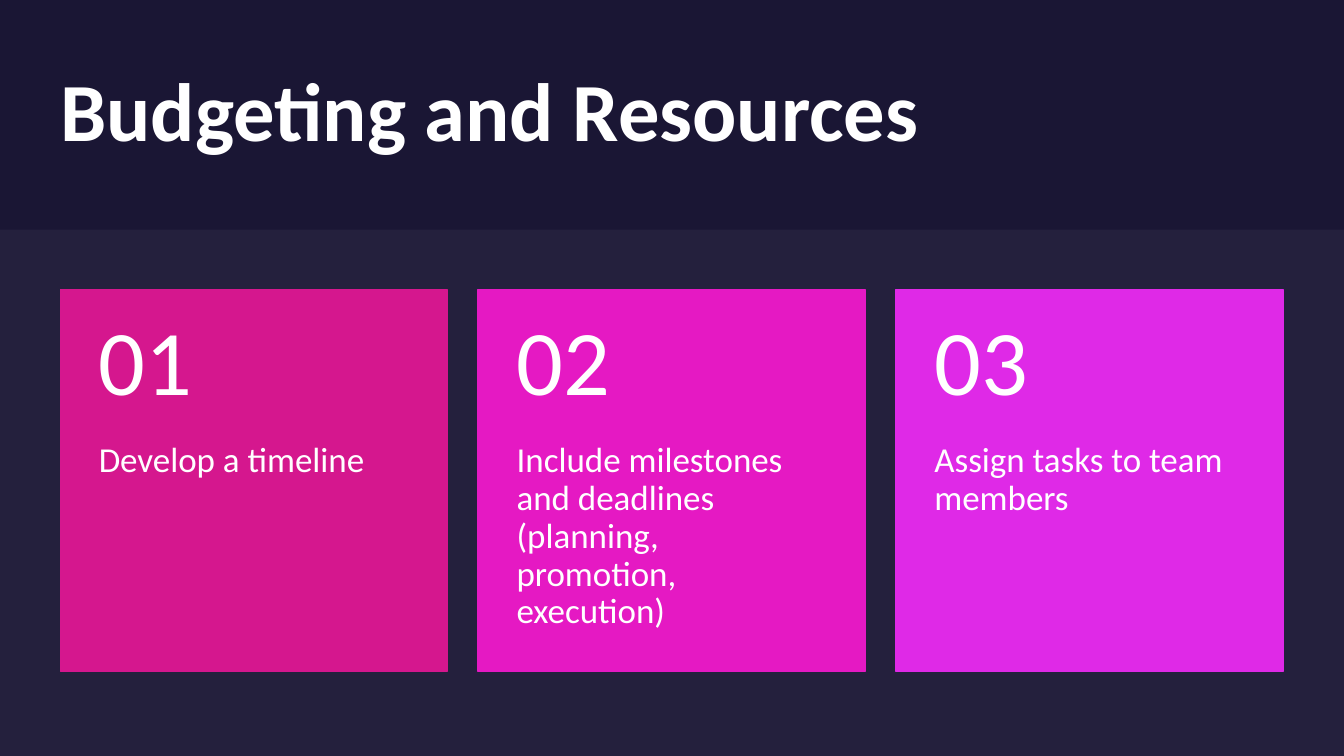
from lxml.etree import SubElement
from pptx import Presentation
from pptx.dml.color import RGBColor
from pptx.enum.shapes import MSO_SHAPE
from pptx.enum.text import MSO_ANCHOR, PP_ALIGN
from pptx.oxml.ns import qn
from pptx.util import Cm, Pt

COLORS = {"bg": "1A1634", "panel": "E3E0F2", "text": "FFFFFF",
          "01": "D5178E", "02": "E519C3", "03": "DF29E7"}
FONT = "Calibri"
WIDTH, HEIGHT = 33.87, 19.05
MARGIN = 1.52
PANEL_TOP = 5.79
CARD_TOP, CARD_W, CARD_H, CARD_STEP = 7.29, 9.75, 9.63, 10.53
HEAD_H = 3.86
CARDS = [
    ("01", "Develop a timeline"),
    ("02", "Include milestones and deadlines (planning, promotion, execution)"),
    ("03", "Assign tasks to team members"),
]


def rgb(name):
    return RGBColor.from_string(COLORS[name])


def set_text(sp, text, size, insets=(0, 0, 0, 0), anchor=MSO_ANCHOR.TOP, bold=False):
    """Write one left-aligned paragraph; insets are left, top, right, bottom in cm."""
    tf = sp.text_frame
    left, top, right, bottom = (Cm(v) for v in insets)
    frame = {"word_wrap": True, "vertical_anchor": anchor,
             "margin_left": left, "margin_top": top,
             "margin_right": right, "margin_bottom": bottom}
    for key, value in frame.items():
        setattr(tf, key, value)
    p = tf.paragraphs[0]
    p.alignment, p.line_spacing = PP_ALIGN.LEFT, 0.9
    r = p.add_run()
    r.text = text
    for key, value in {"name": FONT, "size": Pt(size), "bold": bold}.items():
        setattr(r.font, key, value)
    r.font.color.rgb = rgb("text")


def add_rect(shapes, box, color, outlined=False, alpha=None):
    sp = shapes.add_shape(MSO_SHAPE.RECTANGLE, *(Cm(v) for v in box))
    sp.shadow.inherit = False
    sp.fill.solid()
    sp.fill.fore_color.rgb = rgb(color)
    if outlined:
        sp.line.color.rgb = rgb(color)
        sp.line.width = Pt(1)
    else:
        sp.line.fill.background()
    if alpha is not None:
        clr = sp._element.spPr.find(qn("a:solidFill")).find(qn("a:srgbClr"))
        SubElement(clr, qn("a:alpha")).set("val", str(alpha * 1000))
    return sp


def add_text(shapes, box, text, size, **fmt):
    sp = shapes.add_textbox(*(Cm(v) for v in box))
    set_text(sp, text, size, **fmt)


def add_card(shapes, left, number, text):
    add_rect(shapes, (left, CARD_TOP, CARD_W, CARD_H), number, outlined=True)
    add_text(shapes, (left, CARD_TOP + HEAD_H, CARD_W, CARD_H - HEAD_H), text, 25,
             insets=(0.97, 0, 0.97, 0.91))
    add_text(shapes, (left, CARD_TOP, CARD_W, HEAD_H), number, 66,
             insets=(0.97, 0.46, 0.97, 0.46), anchor=MSO_ANCHOR.MIDDLE)


def add_title(s, text):
    sp = s.shapes.title
    box = {"left": MARGIN, "top": 1.52, "width": 26.9, "height": 2.74}
    for key, value in box.items():
        setattr(sp, key, Cm(value))
    set_text(sp, text, 59, anchor=MSO_ANCHOR.MIDDLE, bold=True)


def main():
    prs = Presentation()
    prs.slide_width, prs.slide_height = Cm(WIDTH), Cm(HEIGHT)
    s = prs.slides.add_slide(prs.slide_layouts[5])
    s.background.fill.solid()
    s.background.fill.fore_color.rgb = rgb("bg")

    # Title and lighter lower panel
    add_title(s, "Budgeting and Resources")
    add_rect(s.shapes, (0, PANEL_TOP, WIDTH, HEIGHT - PANEL_TOP), "panel", alpha=5)

    # Numbered cards
    group = s.shapes.add_group_shape()
    for i, (number, text) in enumerate(CARDS):
        add_card(group.shapes, MARGIN + i * CARD_STEP, number, text)

    prs.save("out.pptx")


if __name__ == "__main__":
    main()
